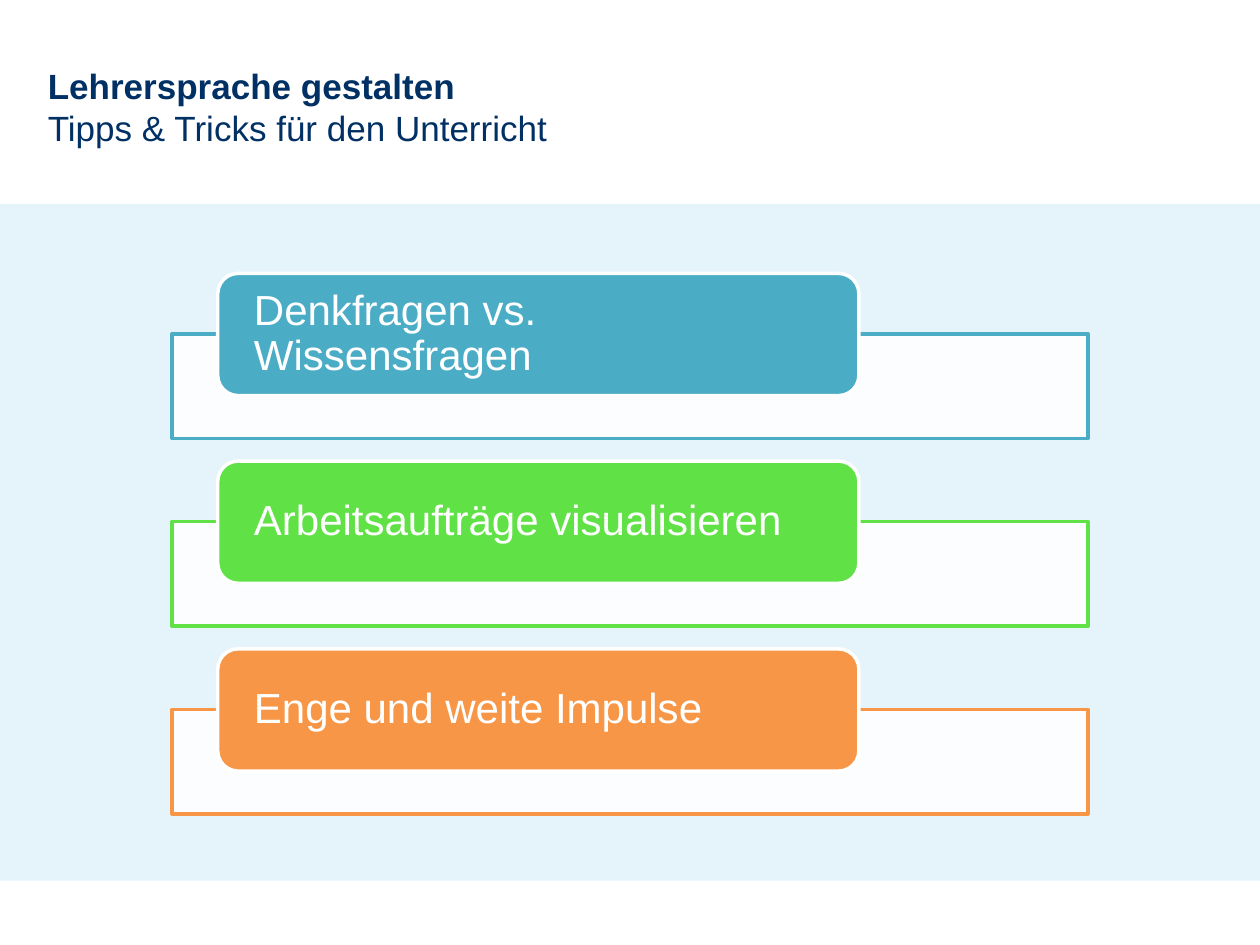
from lxml.etree import SubElement
from pptx import Presentation
from pptx.dml.color import RGBColor
from pptx.enum.shapes import MSO_SHAPE
from pptx.enum.text import MSO_ANCHOR, MSO_AUTO_SIZE, PP_ALIGN
from pptx.oxml.ns import qn
from pptx.util import Inches, Pt

NAVY = RGBColor(0x00, 0x30, 0x64)
BLUE = RGBColor(0x00, 0x8C, 0xCF)
TEAL = RGBColor(0x4B, 0xAC, 0xC6)
GREEN = RGBColor(0x60, 0xE1, 0x46)
ORANGE = RGBColor(0xF7, 0x96, 0x46)
WHITE = RGBColor(0xFF, 0xFF, 0xFF)

HEADING = [("Lehrersprache gestalten", True), ("Tipps & Tricks für den Unterricht", False)]
TIPS = [
    ("Denkfragen vs. Wissensfragen", TEAL),
    ("Arbeitsaufträge visualisieren", GREEN),
    ("Enge und weite Impulse", ORANGE),
]

WIDTH, HEIGHT = 10, 7.5
BAND_TOP, BAND_HEIGHT = 1.62, 5.37
FRAME_WIDTH, FRAME_HEIGHT = 7.27, 0.83
LABEL_WIDTH, LABEL_HEIGHT = 0.7 * FRAME_WIDTH, 0.97
FRAME_LEFT = (WIDTH - FRAME_WIDTH) / 2
LABEL_LEFT = FRAME_LEFT + 0.05 * FRAME_WIDTH
FIRST_LABEL_TOP, ROW_PITCH, FRAME_DROP = 2.17, 1.49, 0.48

FRAME_FORMAT = dict(word_wrap=True, vertical_anchor=MSO_ANCHOR.MIDDLE,
                    margin_left=Inches(0.24), margin_right=Inches(0.24),
                    margin_top=0, margin_bottom=0)
HEADING_FORMAT = dict(word_wrap=True, vertical_anchor=MSO_ANCHOR.TOP,
                      auto_size=MSO_AUTO_SIZE.SHAPE_TO_FIT_TEXT)
LABEL_PARAGRAPH = dict(alignment=PP_ALIGN.LEFT, line_spacing=0.9)
HEADING_PARAGRAPH = dict(alignment=PP_ALIGN.LEFT, line_spacing=1.0, space_before=Pt(0))


def apply(target, values):
    for attribute, value in values.items():
        setattr(target, attribute, value)


def write(paragraph, text, paragraph_format, size, color, bold=False):
    paragraph.text = text
    apply(paragraph, paragraph_format)
    apply(paragraph.font, dict(name="Arial", size=Pt(size), bold=bold))
    paragraph.font.color.rgb = color


def add_box(slide, kind, left, top, width, height, fill, line=None, opacity=100):
    box = slide.shapes.add_shape(kind, *map(Inches, (left, top, width, height)))
    box.shadow.inherit = False
    box.fill.solid()
    box.fill.fore_color.rgb = fill
    if opacity < 100:
        color = box.fill._xPr.find(qn("a:solidFill"))[0]
        SubElement(color, qn("a:alpha"), val=str(opacity * 1000))
    if line is None:
        box.line.fill.background()
    else:
        box.line.color.rgb = line
        box.line.width = Pt(2)
    return box


def main():
    deck = Presentation()
    apply(deck, dict(slide_width=Inches(WIDTH), slide_height=Inches(HEIGHT)))
    slide = deck.slides.add_slide(deck.slide_layouts[5])

    add_box(slide, MSO_SHAPE.RECTANGLE, 0, BAND_TOP, WIDTH, BAND_HEIGHT, BLUE, opacity=10)

    for row, (tip, color) in enumerate(TIPS):
        top = FIRST_LABEL_TOP + row * ROW_PITCH
        add_box(slide, MSO_SHAPE.RECTANGLE, FRAME_LEFT, top + FRAME_DROP,
                FRAME_WIDTH, FRAME_HEIGHT, WHITE, color, opacity=90)
        label = add_box(slide, MSO_SHAPE.ROUNDED_RECTANGLE, LABEL_LEFT, top,
                        LABEL_WIDTH, LABEL_HEIGHT, color, WHITE)
        apply(label.text_frame, FRAME_FORMAT)
        write(label.text_frame.paragraphs[0], tip, LABEL_PARAGRAPH, 24, WHITE)

    heading = slide.shapes.title
    apply(heading, dict(left=Inches(0.28), top=Inches(0.46),
                        width=Inches(6.54), height=Inches(0.77)))
    apply(heading.text_frame, HEADING_FORMAT)
    for index, (text, bold) in enumerate(HEADING):
        paragraph = heading.text_frame.add_paragraph() if index else heading.text_frame.paragraphs[0]
        write(paragraph, text, HEADING_PARAGRAPH, 20, NAVY, bold)

    deck.save("out.pptx")


if __name__ == "__main__":
    main()
